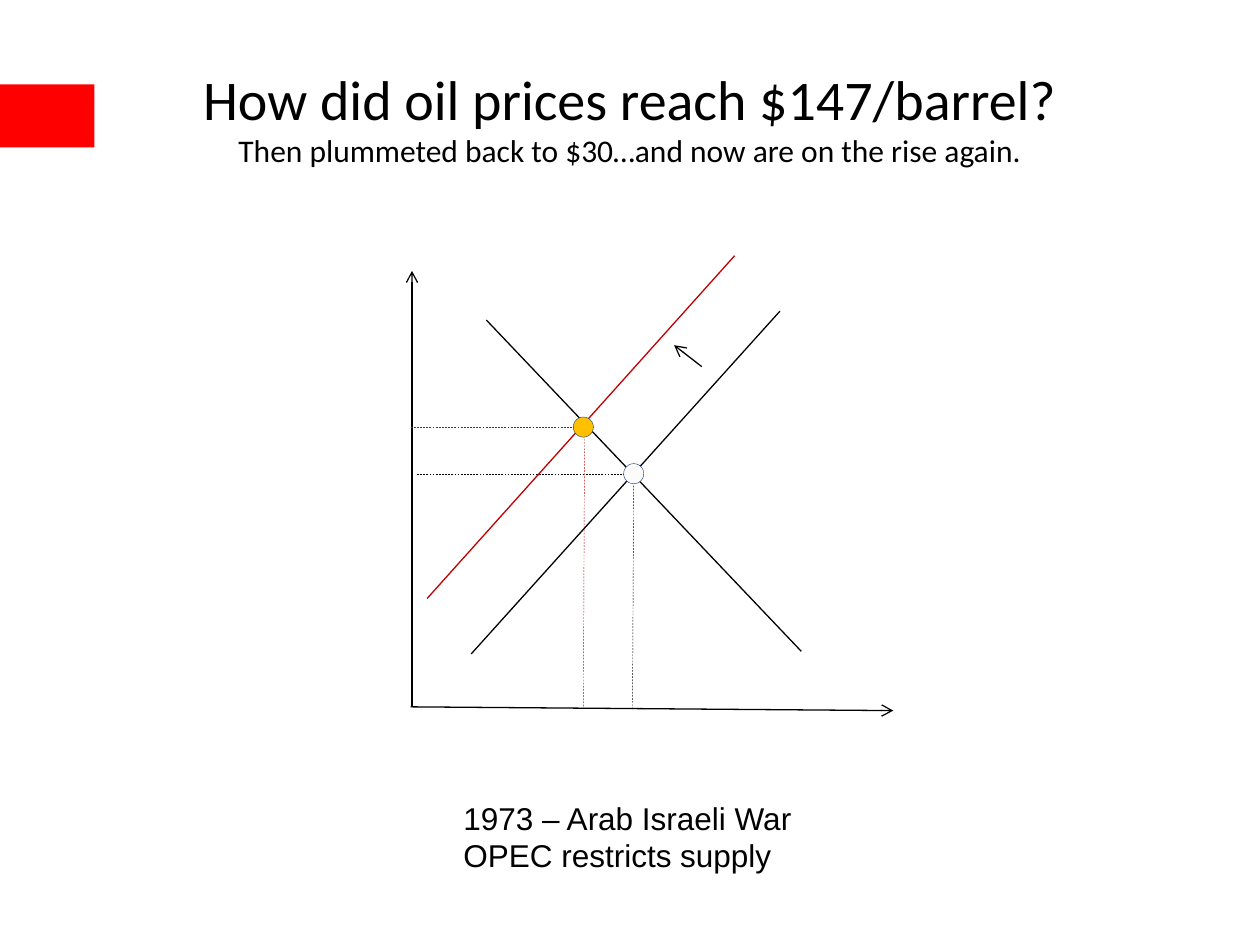
from lxml.etree import SubElement
from pptx import Presentation
from pptx.dml.color import RGBColor
from pptx.enum.dml import MSO_LINE
from pptx.enum.shapes import MSO_CONNECTOR, MSO_SHAPE
from pptx.enum.text import MSO_ANCHOR, PP_ALIGN
from pptx.oxml.ns import qn
from pptx.util import Inches, Pt

BLACK, RED = "000000", "C00000"
color = RGBColor.from_string


def add_text(paragraph, text, size=18, font="Calibri", fill=BLACK):
    run = paragraph.add_run()
    run.text = text
    run.font.size = Pt(size)
    run.font.name = font
    run.font.color.rgb = color(fill)


def add_line(x1, y1, x2, y2, stroke=BLACK, guide=False, arrow=False):
    line = slide.shapes.add_connector(
        MSO_CONNECTOR.STRAIGHT, Inches(x1), Inches(y1), Inches(x2), Inches(y2))
    line.line.color.rgb = color(stroke)
    line.line.width = Pt(0.25 if guide else 0.75)
    if guide:
        line.line.dash_style = MSO_LINE.DASH
    properties = line._element.spPr
    if arrow:
        SubElement(properties.find(qn("a:ln")), qn("a:tailEnd"), type="arrow")
    SubElement(properties, qn("a:effectLst"))


presentation = Presentation()
presentation.slide_width = Inches(10)
presentation.slide_height = Inches(7.5)
slide = presentation.slides.add_slide(presentation.slide_layouts[6])

accent = slide.shapes.add_shape(
    MSO_SHAPE.RECTANGLE, 0, Inches(0.67), Inches(0.75), Inches(0.5))
accent.shadow.inherit = False
accent.fill.solid()
accent.fill.fore_color.rgb = color("FF0000")
accent.line.fill.background()

title = slide.shapes.add_textbox(
    Inches(0.5), Inches(0.3), Inches(9), Inches(1.25)).text_frame
title.word_wrap = True
title.vertical_anchor = MSO_ANCHOR.MIDDLE
heading = title.paragraphs[0]
heading.alignment = PP_ALIGN.CENTER
add_text(heading, "How did oil prices reach $147/barrel?", size=32)
heading.add_line_break()
add_text(heading, "Then plummeted back to $30…and now are on the rise again.")

caption = slide.shapes.add_textbox(
    Inches(3.58), Inches(6.35), Inches(2.83), Inches(0.65)).text_frame
caption.word_wrap = False
event = caption.paragraphs[0]
effect = caption.add_paragraph()
effect.space_before = Pt(3.6)
for paragraph, text in ((event, "1973 – Arab Israeli War"),
                        (effect, "OPEC restricts supply")):
    paragraph.line_spacing = 0.8
    add_text(paragraph, text, font="Arial")

add_line(5.03, 3.68, 5.02, 5.64, guide=True)
add_line(6.36, 5.17, 3.86, 2.54)
add_line(3.26, 5.61, 7.09, 5.64, arrow=True)
add_line(3.27, 5.61, 3.27, 2.15, arrow=True)
add_line(3.74, 5.19, 6.19, 2.47)
add_line(3.31, 3.76, 5.11, 3.76, guide=True)
add_line(3.39, 4.75, 5.83, 2.03, stroke=RED)
add_line(4.64, 3.31, 4.63, 5.62, stroke=RED, guide=True)
add_line(3.26, 3.39, 4.72, 3.39, stroke=RED, guide=True)
add_line(5.57, 2.91, 5.35, 2.74, arrow=True)

for left, top, fill in ((4.95, 3.68, "FCFBF9"), (4.55, 3.31, "FFC000")):
    equilibrium = slide.shapes.add_shape(
        MSO_SHAPE.OVAL, Inches(left), Inches(top), Inches(0.16), Inches(0.16))
    equilibrium.shadow.inherit = False
    equilibrium.fill.solid()
    equilibrium.fill.fore_color.rgb = color(fill)
    equilibrium.line.color.rgb = color("1F497D")
    equilibrium.line.width = Pt(0.25)

presentation.save("out.pptx")
